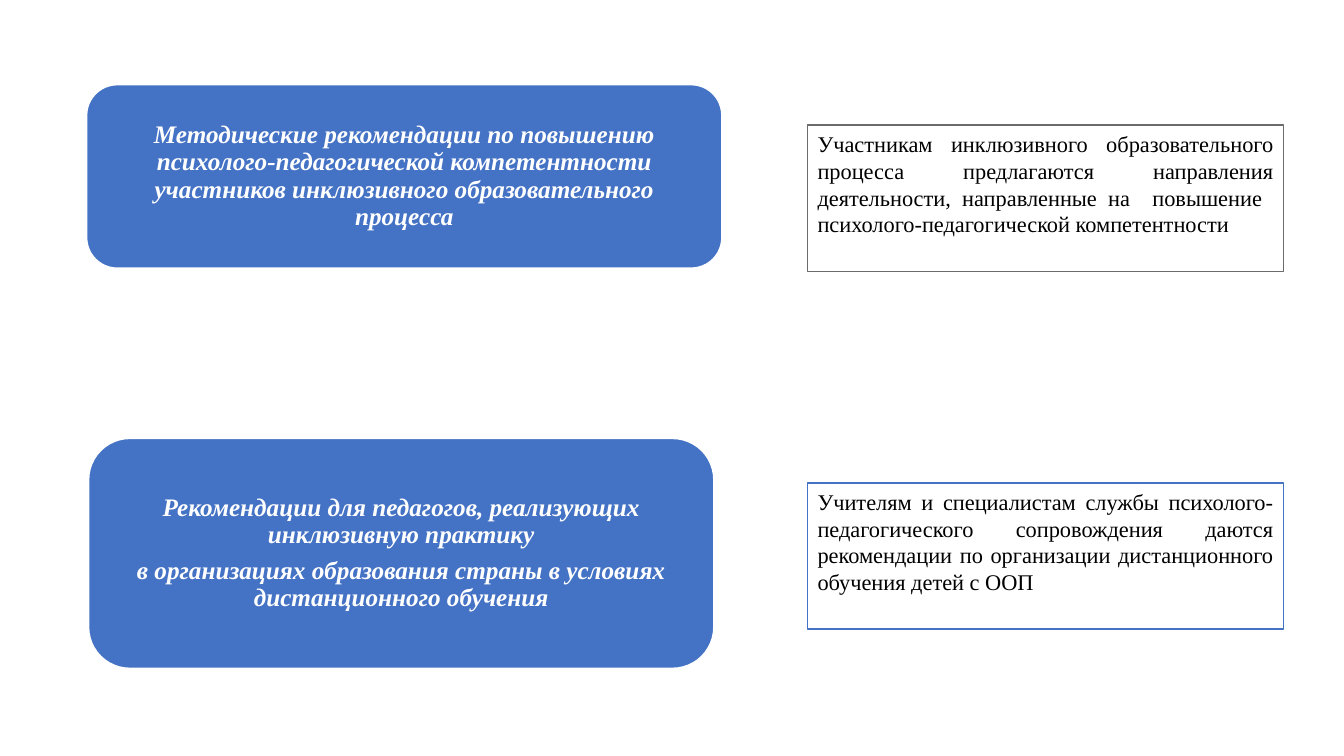
from pptx import Presentation
from pptx import util as u
from pptx.dml.color import RGBColor
from pptx.enum import shapes, text

THEME = {
    "font": "Times New Roman",
    "blue": "4472C4", "white": "FFFFFF", "black": "000000", "grey": "6B6B6B",
    "title_size": 18, "note_size": 16,
}

# Each title: left, top, width, height in inches, corner rounding, paragraphs
TITLES = [
    ((0.86, 0.84, 6.3, 1.82), 0.167, [
        "Методические рекомендации по повышению психолого-педагогической "
        "компетентности участников инклюзивного образовательного процесса"]),
    ((0.88, 4.35, 6.2, 2.28), 0.179, [
        "Рекомендации для педагогов, реализующих инклюзивную практику",
        "в организациях образования страны в условиях дистанционного обучения"]),
]

# Notes share one column: top, outline colour, outline width, paragraph
NOTE_LEFT, NOTE_WIDTH, NOTE_HEIGHT = 8.01, 4.72, 1.45
NOTES = [
    (1.24, "grey", 0.75,
     "Участникам инклюзивного образовательного процесса предлагаются "
     "направления деятельности, направленные на  повышение  "
     "психолого-педагогической компетентности"),
    (4.79, "blue", 1,
     "Учителям и специалистам службы психолого-педагогического сопровождения "
     "даются рекомендации по организации дистанционного обучения детей с ООП"),
]


def color(name):
    return RGBColor.from_string(THEME[name])


def add_box(s, kind, box, fill, line, line_width):
    sp = s.shapes.add_shape(kind, *(u.Inches(v) for v in box))
    sp.shadow.inherit = False
    sp.fill.solid()
    sp.fill.fore_color.rgb = color(fill)
    sp.line.color.rgb = color(line)
    sp.line.width = u.Pt(line_width)
    return sp


def write(sp, paragraphs, size, ink, align, emphasis=False):
    """Fill the shape with text; emphasis means bold italic."""
    tf = sp.text_frame
    tf.word_wrap = True
    tf.text = "\n".join(paragraphs)
    for p in tf.paragraphs:
        p.alignment = align
        for r in p.runs:
            r.font.name = THEME["font"]
            r.font.size = u.Pt(THEME[size])
            r.font.color.rgb = color(ink)
            r.font.bold = r.font.italic = emphasis
    return tf


def add_title(s, box, rounding, paragraphs):
    sp = add_box(s, shapes.MSO_SHAPE.ROUNDED_RECTANGLE, box, "blue", "white", 1)
    sp.adjustments[0] = rounding
    tf = write(sp, paragraphs, "title_size", "white", text.PP_ALIGN.CENTER, True)
    tf.vertical_anchor = text.MSO_ANCHOR.MIDDLE
    tf.margin_left = tf.margin_right = u.Inches(0.07)
    tf.margin_top = tf.margin_bottom = u.Inches(0.07)
    for p in tf.paragraphs:
        p.line_spacing = 0.9
        p.space_after = u.Pt(0.35 * THEME["title_size"])


def add_note(s, top, line, line_width, paragraph):
    box = (NOTE_LEFT, top, NOTE_WIDTH, NOTE_HEIGHT)
    sp = add_box(s, shapes.MSO_SHAPE.RECTANGLE, box, "white", line, line_width)
    tf = write(sp, [paragraph], "note_size", "black", text.PP_ALIGN.JUSTIFY)
    tf.vertical_anchor = text.MSO_ANCHOR.TOP


def main():
    prs = Presentation()
    prs.slide_width, prs.slide_height = u.Inches(13.33), u.Inches(7.5)
    s = prs.slides.add_slide(prs.slide_layouts[6])
    for title in TITLES:
        add_title(s, *title)
    for note in NOTES:
        add_note(s, *note)
    prs.save("out.pptx")


if __name__ == "__main__":
    main()
